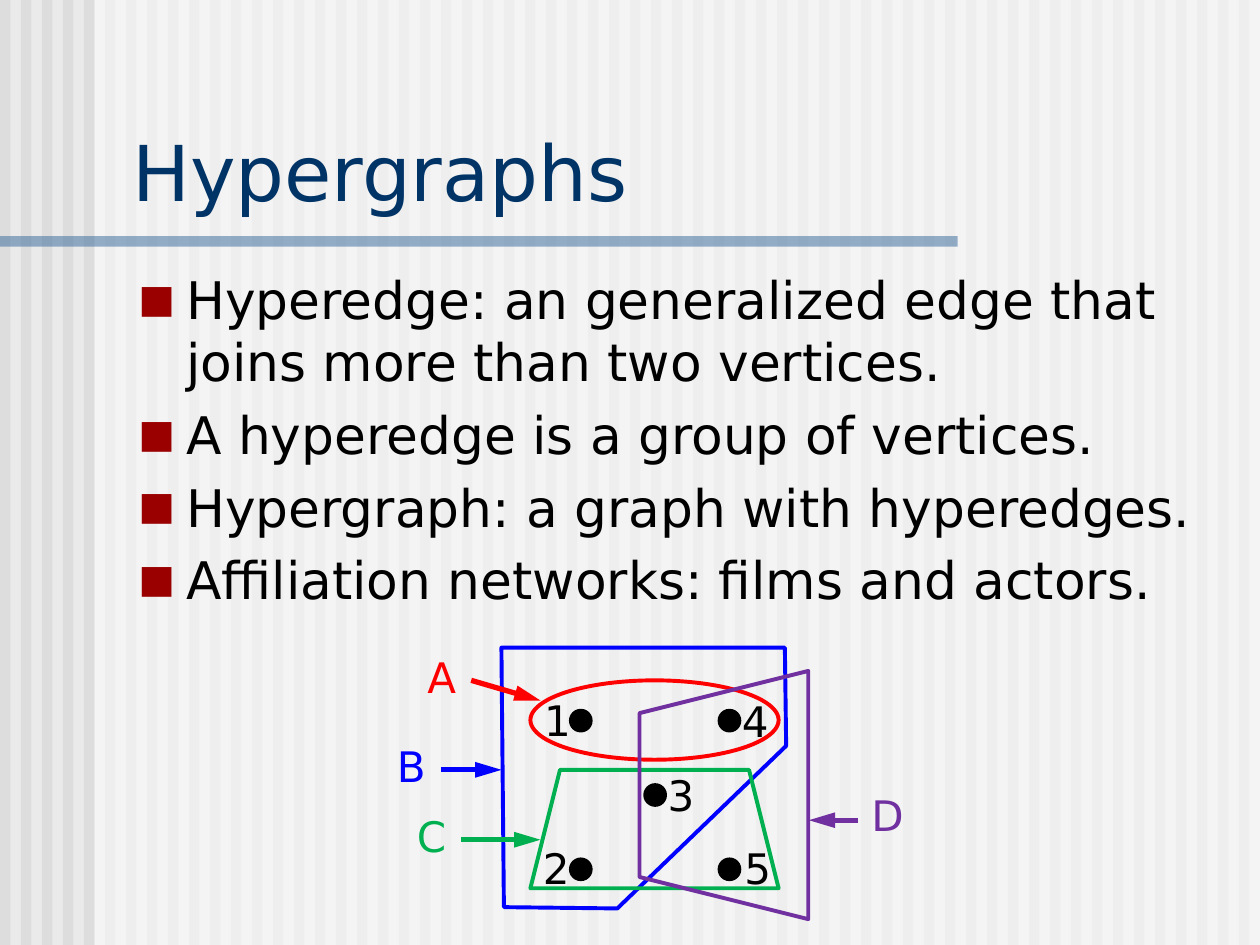
from lxml.etree import SubElement
from pptx import Presentation
from pptx.dml.color import RGBColor
from pptx.enum.shapes import MSO_CONNECTOR as Connector, MSO_SHAPE as Shape
from pptx.enum.text import MSO_ANCHOR as Anchor, MSO_AUTO_SIZE as AutoSize, PP_ALIGN as Align
from pptx.oxml.ns import qn
from pptx.util import Inches, Pt

COLORS = {
    "background": "EAEAEA", "stripe": "DDDDDD", "veil": "FFFFFF", "rule": "336699",
    "title": "003366", "text": "000000", "bullet": "9A0000",
    "A": "FF0000", "B": "0000FF", "C": "00B050", "D": "7030A0",
}
FONT = "DejaVu Sans"
WIDTH, HEIGHT = Inches(10), Inches(7.5)
STRIPES = 60
COLUMNS, ROWS = 43, 22
BULLETS = [
    "Hyperedge: an generalized edge that joins more than two vertices.",
    "A hyperedge is a group of vertices.",
    "Hypergraph: a graph with hyperedges.",
    "Affiliation networks: films and actors.",
]
VERTICES = {
    "1": ((16.1, 6.2), (11.9, 4.1)),
    "2": ((16.1, 18), (11.8, 15.9)),
    "3": ((22, 12.1), (21.7, 10.1)),
    "4": ((27.9, 6.2), (27.6, 4.2)),
    "5": ((27.9, 18), (27.8, 15.9)),
}
EDGE_LABELS = {
    "A": ((2.7, 0.7), (7.4, 3), (12.9, 4.6)),
    "B": ((0.3, 7.8), (5, 10.1), (9.8, 10.1)),
    "C": ((1.9, 13.3), (6.6, 15.65), (12.9, 15.65)),
    "D": ((38.1, 11.7), (38.1, 14.1), (34.2, 14.1)),
}
EDGE_B = [(9.8, 0.4), (32.3, 0.4), (32.4, 8.2), (19, 21.1), (10, 21)]


def color(name):
    """Return the named colour."""
    return RGBColor.from_string(COLORS[name])


def set_font(paragraph, size, name):
    """Format a whole paragraph."""
    paragraph.font.name = FONT
    paragraph.font.size = Pt(size)
    paragraph.font.color.rgb = color(name)


def add_filled(shapes, kind, box, name, opacity=100):
    """Add a borderless shape with a plain fill."""
    shape = shapes.add_shape(kind, *map(round, box))
    shape.shadow.inherit = False
    shape.fill.solid()
    shape.fill.fore_color.rgb = color(name)
    shape.line.fill.background()
    if opacity < 100:
        fill_color = shape.fill._xPr.find(qn("a:solidFill"))[0]
        SubElement(fill_color, qn("a:alpha"), val=str(opacity * 1000))
    return shape


def add_backdrop(slide, box):
    """Cover the box with stripes, a pale veil and the title rule."""
    left, top, width, height = box
    slide.background.fill.solid()
    slide.background.fill.fore_color.rgb = color("background")
    shapes = slide.shapes.add_group_shape().shapes
    step = width / STRIPES
    for index in range(STRIPES):
        add_filled(shapes, Shape.RECTANGLE, (left + index * step, top, step / 2, height), "stripe")
    add_filled(shapes, Shape.RECTANGLE,
               (left + width * 0.075, top, width * 0.925, height), "veil", 50)
    add_filled(shapes, Shape.RECTANGLE,
               (left, top + height * 0.25, width * 0.76, height / 90), "rule", 50)


def add_title(slide, box):
    """Place the title placeholder in front of the backdrop."""
    title = slide.shapes.title
    title.left, title.top, title.width, title.height = map(round, box)
    slide.shapes._spTree.append(title._element)
    frame = title.text_frame
    frame.text = "Hypergraphs"
    frame.vertical_anchor = Anchor.BOTTOM
    frame.auto_size = AutoSize.NONE
    paragraph = frame.paragraphs[0]
    paragraph.alignment = Align.LEFT
    set_font(paragraph, 44, "title")


def add_bullets(slide, box):
    """Write the square-bulleted list."""
    frame = slide.shapes.add_textbox(*map(round, box)).text_frame
    frame.word_wrap = True
    frame.text = "\n".join(BULLETS)
    for paragraph in frame.paragraphs:
        set_font(paragraph, 29.6, "text")
        properties = paragraph._p.get_or_add_pPr()
        properties.set("marL", str(Inches(0.38)))
        properties.set("indent", str(-Inches(0.38)))
        bullet_color = SubElement(properties, qn("a:buClr"))
        SubElement(bullet_color, qn("a:srgbClr"), val=COLORS["bullet"])
        SubElement(properties, qn("a:buSzPct"), val="75000")
        SubElement(properties, qn("a:buFont"), typeface=FONT)
        SubElement(properties, qn("a:buChar"), char="■")
        paragraph.space_before = Pt(6)


def style_outline(shape, name):
    """Leave only a coloured outline."""
    shape.shadow.inherit = False
    shape.fill.background()
    shape.line.color.rgb = color(name)
    shape.line.width = Pt(2.25)


def add_label(shapes, box, text, name):
    """Add one centred letter or digit."""
    frame = shapes.add_textbox(*box).text_frame
    frame.margin_left = frame.margin_top = frame.margin_right = frame.margin_bottom = 0
    frame.word_wrap = False
    frame.text = text
    frame.paragraphs[0].alignment = Align.CENTER
    set_font(frame.paragraphs[0], 24, name)


def add_arrow(shapes, start, end, name):
    """Add an arrow from start to end."""
    arrow = shapes.add_connector(Connector.STRAIGHT, *start, *end)
    arrow.line.color.rgb = color(name)
    arrow.line.width = Pt(3)
    SubElement(arrow.line._get_or_add_ln(), qn("a:tailEnd"), type="triangle", len="lg")
    SubElement(arrow._element.spPr, qn("a:effectLst"))


def add_hypergraph(slide, box):
    """Draw vertices, hyperedges and labels on a grid inside the box."""
    left, top, width, height = box
    column, row = width / COLUMNS, height / ROWS
    shapes = slide.shapes.add_group_shape().shapes

    def point(x, y):
        """Turn grid coordinates into a slide position."""
        return round(left + x * column), round(top + y * row)

    def cells(x, y, across, down):
        """Turn a grid rectangle into a slide rectangle."""
        return *point(x, y), round(across * column), round(down * row)

    for (x, y), _ in VERTICES.values():
        dot = add_filled(shapes, Shape.OVAL, cells(x - 0.8, y - 0.8, 1.6, 1.6), "text")
        dot.line.color.rgb = color("text")
        dot.line.width = Pt(2)

    style_outline(shapes.add_shape(Shape.OVAL, *cells(12.1, 3, 19.7, 6.3)), "A")
    builder = shapes.build_freeform(*point(*EDGE_B[0]))
    builder.add_line_segments([point(*corner) for corner in EDGE_B[1:]], close=True)
    style_outline(builder.convert_to_shape(), "B")
    style_outline(shapes.add_shape(Shape.TRAPEZOID, *cells(12.1, 10.1, 19.7, 9.4)), "C")
    edge_d = shapes.add_shape(Shape.TRAPEZOID, *cells(17.6, 5.4, 19.7, 13.4))
    edge_d.rotation = 270
    style_outline(edge_d, "D")

    for text, (_, corner) in VERTICES.items():
        add_label(shapes, cells(*corner, 4.7, 4.7), text, "text")
    for text, (corner, start, end) in EDGE_LABELS.items():
        add_label(shapes, cells(*corner, 4.7, 4.7), text, text)
        add_arrow(shapes, point(*start), point(*end), text)


def main():
    """Build and save the slide."""
    presentation = Presentation()
    presentation.slide_width, presentation.slide_height = WIDTH, HEIGHT
    slide = presentation.slides.add_slide(presentation.slide_layouts[5])
    add_backdrop(slide, (0, 0, WIDTH, HEIGHT))
    add_title(slide, (WIDTH * 0.095, HEIGHT * 0.124, WIDTH * 0.893, HEIGHT * 0.112))
    add_bullets(slide, (WIDTH * 0.1, HEIGHT * 0.277, WIDTH * 0.887, HEIGHT * 0.421))
    add_hypergraph(slide, (WIDTH * 0.3, HEIGHT * 0.68, WIDTH * 0.43, HEIGHT * 0.2933))
    presentation.save("out.pptx")


if __name__ == "__main__":
    main()
